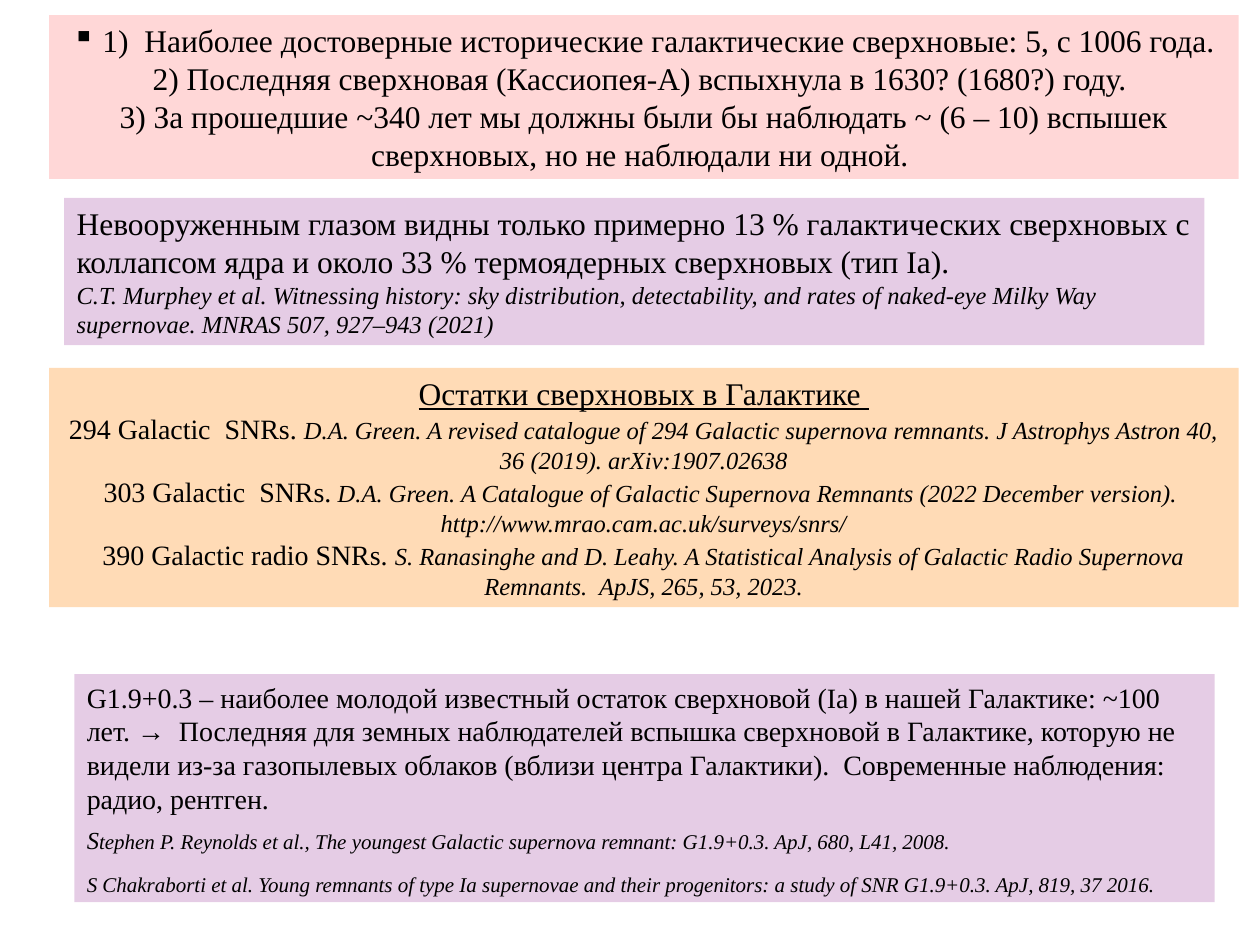
from lxml import etree
from pptx import Presentation
from pptx.dml.color import RGBColor
from pptx.enum.shapes import MSO_SHAPE
from pptx.enum.text import MSO_ANCHOR, MSO_AUTO_SIZE, PP_ALIGN
from pptx.oxml.ns import qn
from pptx.util import Inches, Pt

RECT = MSO_SHAPE.RECTANGLE
TOP = MSO_ANCHOR.TOP
GROW, FIXED = MSO_AUTO_SIZE.SHAPE_TO_FIT_TEXT, MSO_AUTO_SIZE.NONE
LEFT, CENTER = PP_ALIGN.LEFT, PP_ALIGN.CENTER

BLACK = RGBColor(0, 0, 0)
RED = RGBColor(0xFF, 0x38, 0x38)
PEACH = RGBColor(0xFF, 0xDB, 0xB6)
PURPLE = RGBColor(0x80, 0, 0x80)
FONT = "Times New Roman"
WIDE, NARROW = 9.44, 9.05
INDENT = Inches(0.24)

# Run: (text, size, style), where style is "", "i" (italic) or "u" (underlined)
HISTORY = [
    [("1)  Наиболее достоверные исторические галактические сверхновые: 5, с 1006 года.", 18, "")],
    [("2) Последняя сверхновая (Кассиопея-А) вспыхнула в 1630? (1680?) году. ", 18, "")],
    [("3) За прошедшие ~340 лет мы должны были бы наблюдать ~ (6 – 10) вспышек "
      "сверхновых, но не наблюдали ни одной. ", 18, "")],
]
REMNANTS = [
    [("Остатки сверхновых в Галактике ", 18, "u")],
    [("294 Galactic  SNRs. ", 16, ""),
     ("D.A. Green. A revised catalogue of 294 Galactic supernova remnants. "
      "J Astrophys Astron 40, 36 (2019). arXiv:1907.02638", 14, "i")],
    [("303 Galactic  SNRs.", 16, ""),
     (" D.A. Green. A Catalogue of Galactic Supernova Remnants (2022 December version).  "
      "http://www.mrao.cam.ac.uk/surveys/snrs/", 14, "i")],
    [("390 Galactic radio SNRs. ", 16, ""),
     ("S. Ranasinghe and D. Leahy. A Statistical Analysis of Galactic Radio Supernova "
      "Remnants.  ApJS, 265, 53, 2023.", 14, "i")],
]
YOUNGEST = [
    [("G1.9+0.3 – наиболее молодой известный остаток сверхновой (Ia) в нашей Галактике: "
      "~100 лет. →  Последняя для земных наблюдателей вспышка сверхновой в Галактике, "
      "которую не видели из-за газопылевых облаков (вблизи центра Галактики).  "
      "Современные наблюдения: радио, рентген.", 16, "")],
    [("S", 14, "i"),
     ("tephen P. Reynolds et al., The youngest Galactic supernova remnant: G1.9+0.3. "
      "ApJ, 680, L41, 2008.", 12, "i")],
    [("S Chakraborti et al. Young remnants of type Ia supernovae and their progenitors: "
      "a study of SNR G1.9+0.3. ApJ, 819, 37 2016.", 12, "i")],
]
VISIBLE = [
    [("Невооруженным глазом видны только примерно 13 % галактических сверхновых с "
      "коллапсом ядра и около 33 % термоядерных сверхновых (тип Ia).", 18, "")],
    [("C.T. Murphey et al. Witnessing history: sky distribution, detectability, and rates "
      "of naked-eye Milky Way supernovae. MNRAS 507, 927–943 (2021)", 14, "i")],
]

# Panel: left, top, width, height, fill, opacity %, align, autosize, gaps after, content
PANELS = [
    (0.39, 0.12, WIDE, 1.3, RED, 20, CENTER, GROW, {}, HISTORY),
    (0.39, 2.92, WIDE, 1.9, PEACH, 100, CENTER, GROW, {}, REMNANTS),
    (0.59, 5.35, NARROW, 1.81, PURPLE, 20, LEFT, GROW, {0: 5.7, 1: 9.9}, YOUNGEST),
    (0.51, 1.57, NARROW, 1.17, PURPLE, 20, LEFT, FIXED, {}, VISIBLE),
]


def paint(shape, color, opacity):
    shape.shadow.inherit = False
    shape.line.fill.background()
    shape.fill.solid()
    shape.fill.fore_color.rgb = color
    if opacity < 100:
        tint = shape.fill._xPr.find(qn("a:solidFill"))[0]
        etree.SubElement(tint, qn("a:alpha")).set("val", str(opacity * 1000))


def add_bullet(para):
    props = para._p.get_or_add_pPr()
    props.set("marL", str(INDENT))
    props.set("indent", str(-INDENT))
    shade = etree.SubElement(props, qn("a:buClr"))
    etree.SubElement(shade, qn("a:srgbClr")).set("val", str(BLACK))
    etree.SubElement(props, qn("a:buChar")).set("char", "▪")


def add_run(para, text, size, style):
    run = para.add_run()
    run.text = text
    font = run.font
    font.name, font.size = FONT, Pt(size)
    font.color.rgb = BLACK
    font.italic = style == "i"
    font.underline = style == "u"


def add_panel(slide, left, top, width, height, color, opacity, align, fit, gaps, content):
    shape = slide.shapes.add_shape(RECT, *map(Inches, (left, top, width, height)))
    paint(shape, color, opacity)
    frame = shape.text_frame
    frame.word_wrap = True
    frame.auto_size = fit
    frame.vertical_anchor = TOP
    for row, runs in enumerate(content):
        para = frame.add_paragraph() if row else frame.paragraphs[0]
        para.alignment = align
        if row in gaps:
            para.space_after = Pt(gaps[row])
        for run in runs:
            add_run(para, *run)
    return frame


def main():
    deck = Presentation()
    deck.slide_width, deck.slide_height = Inches(10), Inches(7.5)
    slide = deck.slides.add_slide(deck.slide_layouts[6])
    frames = [add_panel(slide, *panel) for panel in PANELS]
    add_bullet(frames[0].paragraphs[0])
    deck.save("out.pptx")


if __name__ == "__main__":
    main()
